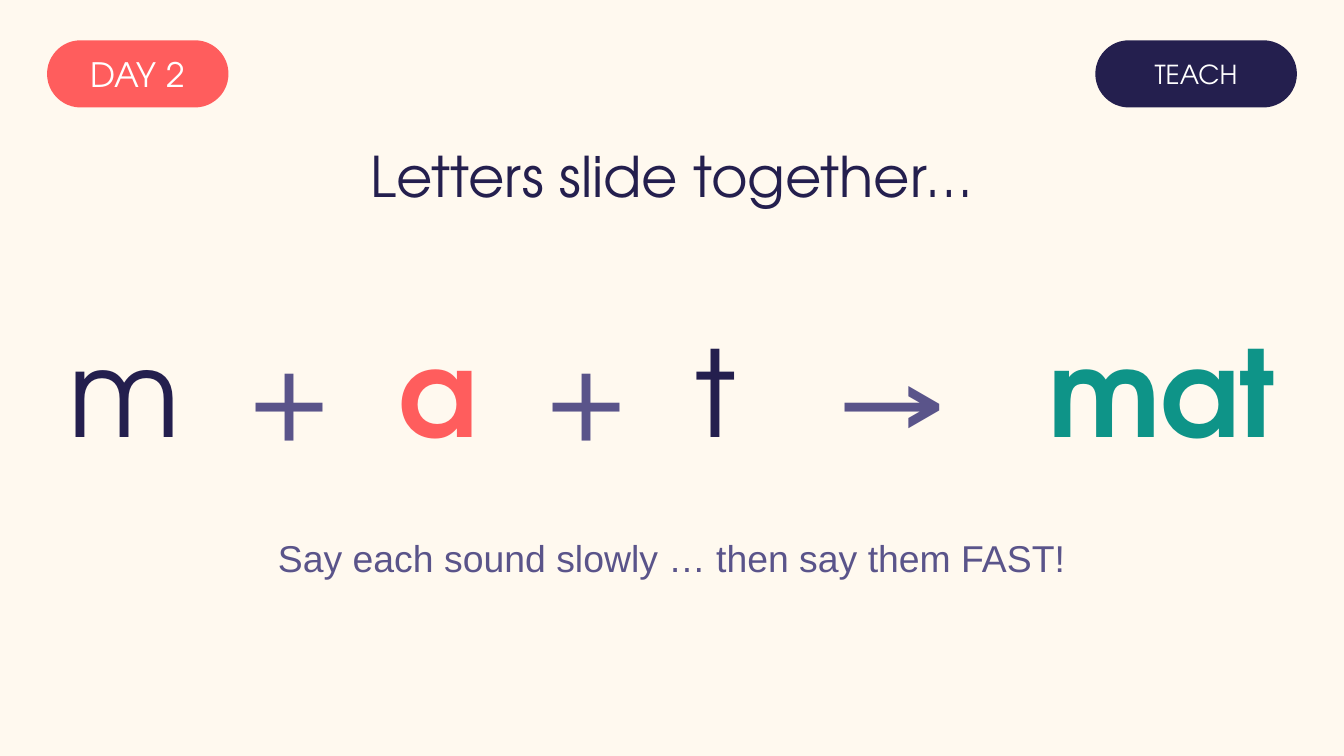
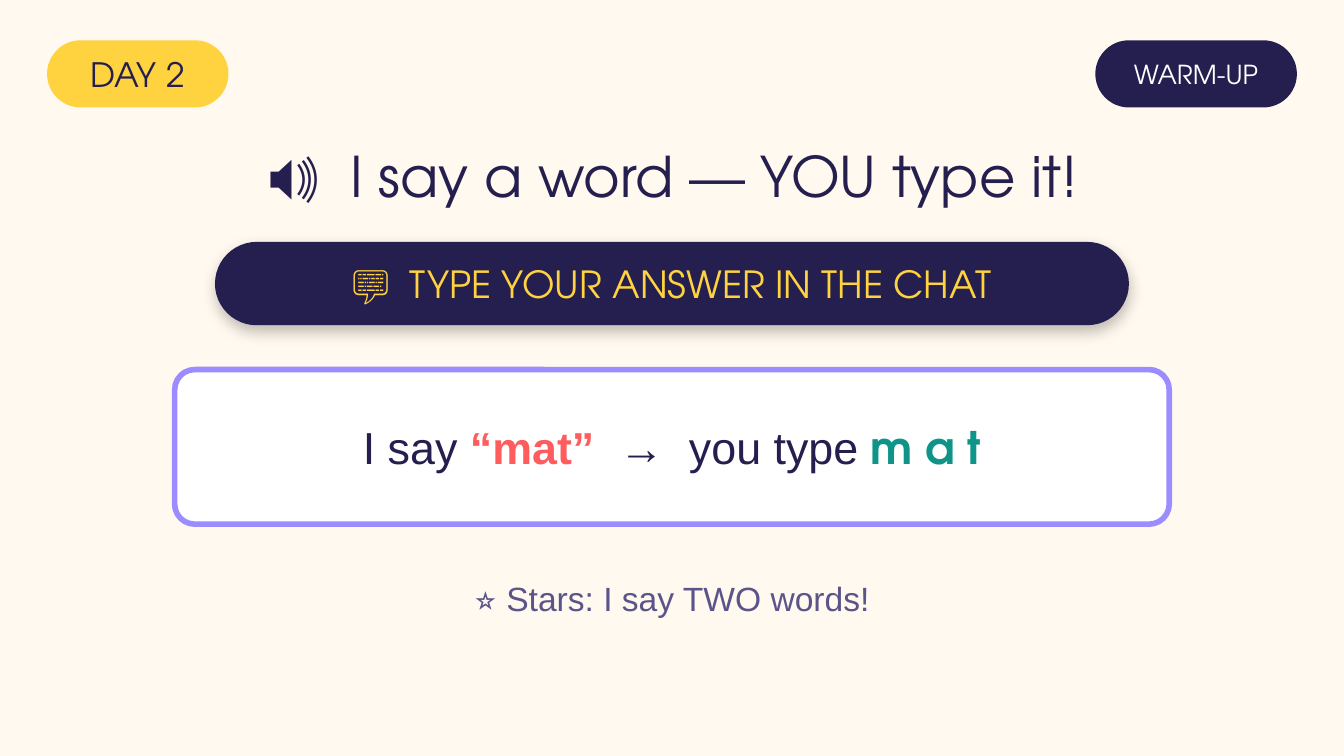
from pptx import Presentation
from pptx import util as u
from pptx.dml.color import RGBColor
from pptx.enum import shapes, text
from pptx.oxml import parse_xml
from pptx.oxml.ns import nsdecls, qn

PX = 914400 // 200  # EMU per px, 200 px to the inch
W, H = 2000, 1125
DISPLAY, BODY = "TeX Gyre Adventor", "Arial"
CREAM, NAVY, WHITE = "FFF9EF", "241F4E", "FFFFFF"
CORAL, YELLOW, TEAL = "FF5D5D", "FFD23F", "0E9488"
MUTED, LILAC = "5A548A", "9B8CFF"
SPACE_WIDTH = 0.277  # width of a space, in ems

rgb = RGBColor.from_string


def write(shape, size, runs, inset=True):
    """Centre runs of (words, colour, face, bold, widening in spaces)."""
    frame = shape.text_frame
    frame.word_wrap = True
    frame.vertical_anchor = text.MSO_ANCHOR.MIDDLE
    if not inset:
        frame.margin_left = frame.margin_right = 0
        frame.margin_top = frame.margin_bottom = 0
    line = frame.paragraphs[0]
    line.alignment = text.PP_ALIGN.CENTER
    for words, colour, face, bold, widen in runs:
        run = line.add_run()
        run.text = words
        run.font.size = u.Pt(size)
        run.font.name = face
        run.font.bold = bold
        run.font.color.rgb = rgb(colour)
        if widen:
            run.font._element.set("spc", str(round(widen * SPACE_WIDTH * size * 100)))


def rounded(slide, box, fill, corner=0.5):
    shape = slide.shapes.add_shape(
        shapes.MSO_SHAPE.ROUNDED_RECTANGLE, *(n * PX for n in box))
    shape.adjustments[0] = corner
    shape.shadow.inherit = False
    shape.fill.solid()
    shape.fill.fore_color.rgb = rgb(fill)
    shape.line.fill.background()
    return shape


prs = Presentation()
prs.slide_width, prs.slide_height = W * PX, H * PX

# Content of each slide: day badge colours, stage, title, closing hint
lessons = [
    (CORAL, WHITE, "TEACH",
     [("Letters slide together…", NAVY, DISPLAY, False, 0)],
     780, 20, "Say each sound slowly … then say them FAST!"),
    (YELLOW, NAVY, "WARM-UP",
     [("🔊", NAVY, DISPLAY, False, 0), (" ", NAVY, DISPLAY, False, 1),
      ("I say a word — YOU type it!", NAVY, DISPLAY, False, 0)],
     840, 18, "⭐ Stars: I say TWO words!"),
]

# Shared frame: background, badges, title and hint
pages = []
for day_fill, day_ink, stage, title, hint_top, hint_size, hint in lessons:
    page = prs.slides.add_slide(prs.slide_layouts[6])
    pages.append(page)
    page.background.fill.solid()
    page.background.fill.fore_color.rgb = rgb(CREAM)

    day_badge = rounded(page, (70, 60, 270, 100), day_fill)
    write(day_badge, 18, [("DAY 2", day_ink, DISPLAY, False, 0)], inset=False)
    stage_badge = rounded(page, (1630, 60, 300, 100), NAVY)
    write(stage_badge, 14, [(stage, WHITE, DISPLAY, False, 0)], inset=False)

    heading = page.shapes.add_textbox(0, 190 * PX, W * PX, 140 * PX)
    write(heading, 30, title)
    closing = page.shapes.add_textbox(0, hint_top * PX, W * PX, 100 * PX)
    write(closing, hint_size, [(hint, MUTED, BODY, False, 0)])

teach, warm_up = pages

# Teach: the sounds, each sign with a wide gap on both sides
sounds = []
for words, colour, bold, sign, widen in [
        ("m", NAVY, False, "+", 1), ("a", CORAL, True, "+", 1),
        ("t", NAVY, False, "→", 2), ("mat", TEAL, True, None, 0)]:
    sounds.append((words, colour, DISPLAY, bold, 0))
    if sign:
        gap = (" ", MUTED, DISPLAY, False, widen)
        sounds += [gap, (sign, MUTED, DISPLAY, False, 0), gap]
equation = teach.shapes.add_textbox(0, 460 * PX, W * PX, 240 * PX)
write(equation, 64, sounds)

# Warm-up: chat banner with a soft shadow
banner = rounded(warm_up, (320, 360, 1360, 124), NAVY)
banner._element.spPr.find(qn("a:effectLst")).append(parse_xml(
    f'<a:outerShdw {nsdecls("a")} blurRad="{u.Pt(8)}" dist="{u.Pt(3)}" '
    'dir="5400000" algn="bl" rotWithShape="0">'
    '<a:srgbClr val="000000"><a:alpha val="25000"/></a:srgbClr></a:outerShdw>'))
write(banner, 20, [
    ("💬", YELLOW, DISPLAY, False, 0), (" ", YELLOW, DISPLAY, False, 1),
    ("TYPE YOUR ANSWER IN THE CHAT", YELLOW, DISPLAY, False, 0)], inset=False)

# Warm-up: worked example card
example = rounded(warm_up, (260, 550, 1480, 230), WHITE, corner=0.13)
example.line.color.rgb = rgb(LILAC)
example.line.width = u.Pt(3)
wide_gap = (" ", NAVY, BODY, False, 1)
write(example, 24, [
    ("I say ", NAVY, BODY, False, 0), ("“mat”", CORAL, BODY, True, 0),
    wide_gap, ("→", NAVY, BODY, False, 0), wide_gap,
    ("you type ", NAVY, BODY, False, 0), ("m a t", TEAL, DISPLAY, True, 0)])

prs.save("out.pptx")
